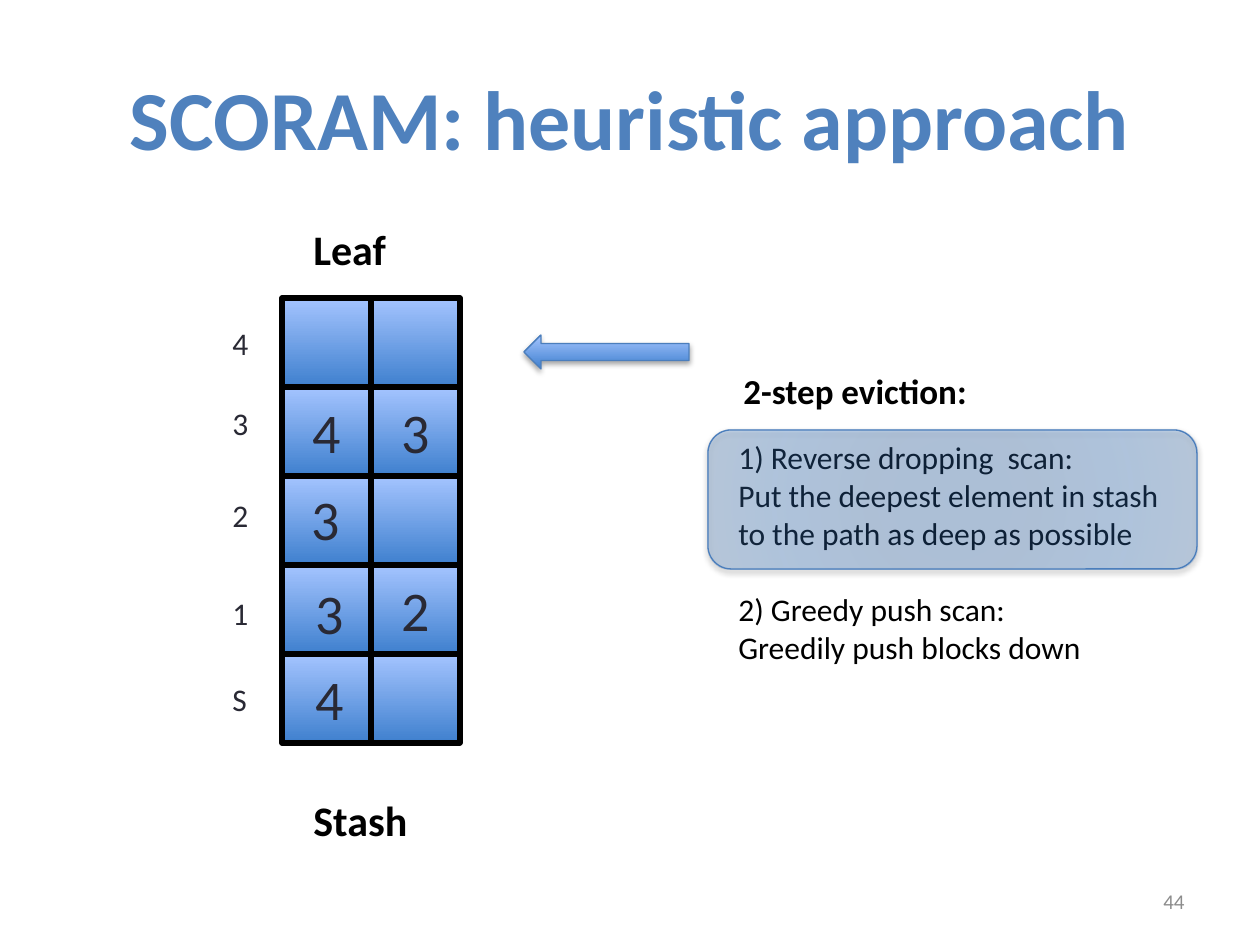
"""Build the SCORAM heuristic eviction slide."""
import dataclasses

import pptx
import pptx.dml.color
import pptx.enum.shapes
import pptx.enum.text
import pptx.oxml
import pptx.oxml.ns
import pptx.util

SHAPE = pptx.enum.shapes.MSO_SHAPE
ALIGN = pptx.enum.text.PP_ALIGN
ANCHOR = pptx.enum.text.MSO_ANCHOR
FIT = pptx.enum.text.MSO_AUTO_SIZE
NAMESPACE = pptx.oxml.ns.nsdecls("a")


@dataclasses.dataclass(frozen=True)
class Theme:
    font: str = "Calibri"
    accent: str = "4F81BD"
    ink: str = "292934"
    black: str = "000000"
    muted: str = "8C8C8C"
    outline: str = "4B7EBC"
    cell_stops: tuple = ((0, "3F80CE"), (100, "A4C4FF"))
    glow_stops: tuple = ((0, "2C6CB9"), (34, "316DB5"), (70, "3679CA"), (100, "4F81BD"))
    title: int = 48
    value: int = 32
    heading: int = 24
    subheading: int = 20
    body: int = 18
    small: int = 12


def px(length):
    return pptx.util.Emu(round(length * 914400 / 126))


def write(frame, text, *, font, size, color, bold=False, align=ALIGN.LEFT, gaps=None):
    for index, line in enumerate(text.split("\n")):
        para = frame.paragraphs[0] if index == 0 else frame.add_paragraph()
        para.alignment = align
        if gaps and index in gaps:
            para.space_before = pptx.util.Pt(gaps[index])
        span = para.add_run()
        span.text = line
        span.font.name = font
        span.font.size = pptx.util.Pt(size)
        span.font.bold = bold
        span.font.color.rgb = pptx.dml.color.RGBColor.from_string(color)


def gradient(stops, alpha, radial):
    marks = "".join(
        f'<a:gs pos="{place * 1000}"><a:srgbClr val="{color}">'
        f'<a:alpha val="{alpha * 1000}"/></a:srgbClr></a:gs>'
        for place, color in stops
    )
    direction = '<a:lin ang="16200000" scaled="0"/>'
    if radial:
        edges = " ".join(f'{side}="100000"' for side in "ltrb")
        direction = f'<a:path path="circle"><a:fillToRect {edges}/></a:path>'
    return pptx.oxml.parse_xml(
        f'<a:gradFill {NAMESPACE} rotWithShape="1"><a:gsLst>{marks}</a:gsLst>{direction}</a:gradFill>'
    )


def soft_shadow(color):
    return pptx.oxml.parse_xml(
        f'<a:outerShdw {NAMESPACE} blurRad="40000" dist="23000" dir="5400000" rotWithShape="0">'
        f'<a:srgbClr val="{color}"><a:alpha val="35000"/></a:srgbClr></a:outerShdw>'
    )


class Slide:
    """Hold the theme and the page being filled."""

    def __init__(self, deck, theme):
        self.theme = theme
        self.page = deck.slides.add_slide(deck.slide_layouts[5])

    def title(self, text, left, top, width, height):
        box = self.page.shapes.title
        box.left, box.top, box.width, box.height = map(px, (left, top, width, height))
        box.text_frame.vertical_anchor = ANCHOR.MIDDLE
        write(box.text_frame, text, font=self.theme.font, size=self.theme.title,
              color=self.theme.accent, bold=True, align=ALIGN.CENTER)

    def label(self, text, left, top, width, height, *, anchor=ANCHOR.TOP, **style):
        box = self.page.shapes.add_textbox(*map(px, (left, top, width, height)))
        box.text_frame.word_wrap = False
        box.text_frame.auto_size = FIT.SHAPE_TO_FIT_TEXT if anchor == ANCHOR.TOP else FIT.NONE
        box.text_frame.vertical_anchor = anchor
        write(box.text_frame, text, font=self.theme.font, **style)

    def shape(self, kind, left, top, width, height, *, stops, line, weight,
              alpha=100, radial=False, shadow=False):
        shape = self.page.shapes.add_shape(kind, *map(px, (left, top, width, height)))
        properties = shape._element.spPr
        properties.insert(2, gradient(stops, alpha, radial))
        shape.line.color.rgb = pptx.dml.color.RGBColor.from_string(line)
        shape.line.width = pptx.util.Pt(weight)
        shape.shadow.inherit = False
        if shadow:
            properties.find(pptx.oxml.ns.qn("a:effectLst")).append(soft_shadow(self.theme.black))
        return shape

    def cell(self, left, top, size, text=""):
        shape = self.shape(SHAPE.RECTANGLE, left, top, size, size,
                           stops=self.theme.cell_stops, line=self.theme.black, weight=3)
        if text:
            shape.text_frame.vertical_anchor = ANCHOR.MIDDLE
            write(shape.text_frame, text, font=self.theme.font, size=self.theme.value,
                  color=self.theme.ink, align=ALIGN.CENTER)


def main():
    deck = pptx.Presentation()
    deck.slide_width, deck.slide_height = px(1260), px(945)
    theme = Theme()
    slide = Slide(deck, theme)
    slide.title("SCORAM: heuristic approach", 63, 38, 1134, 158)

    side = 89
    path_values = (("", ""), ("4", "3"), ("", ""), ("", "2"), ("", ""))
    for row, values in enumerate(path_values):
        for column, value in enumerate(values):
            slide.cell(282 + column * side, 298 + row * side, side, value)

    for level, top in (("4", 318), ("3", 398), ("2", 490), ("1", 588), ("S", 674)):
        slide.label(level, 220, top, 43, 50, size=theme.body, color=theme.ink)
    for value, left, top in (("3", 297, 478), ("3", 301, 572), ("4", 301, 658)):
        slide.label(value, left, top, 57, 81, size=theme.value, color=theme.ink, align=ALIGN.CENTER)

    slide.shape(SHAPE.LEFT_ARROW, 524, 335, 165, 34, stops=theme.cell_stops,
                line=theme.outline, weight=0.75, shadow=True)
    steps = ("1) Reverse dropping  scan:\nPut the deepest element in stash\n"
             "to the path as deep as possible\n2) Greedy push scan:\nGreedily push blocks down")
    slide.label(steps, 726, 432, 451, 242, size=theme.body, color=theme.black, gaps={3: 22})
    slide.shape(SHAPE.ROUNDED_RECTANGLE, 708, 430, 489, 139, stops=theme.glow_stops,
                line=theme.outline, weight=0.75, alpha=30, radial=True, shadow=True)

    for text, top, width in (("Leaf", 217, 100), ("Stash", 788, 121)):
        slide.label(text, 301, top, width, 63, size=theme.heading, color=theme.black, bold=True)
    slide.label("2-step eviction:", 731, 363, 252, 55, size=theme.subheading,
                color=theme.black, bold=True)
    slide.label("44", 903, 876, 294, 50, anchor=ANCHOR.MIDDLE, size=theme.small,
                color=theme.muted, align=ALIGN.RIGHT)
    deck.save("out.pptx")


if __name__ == "__main__":
    main()
